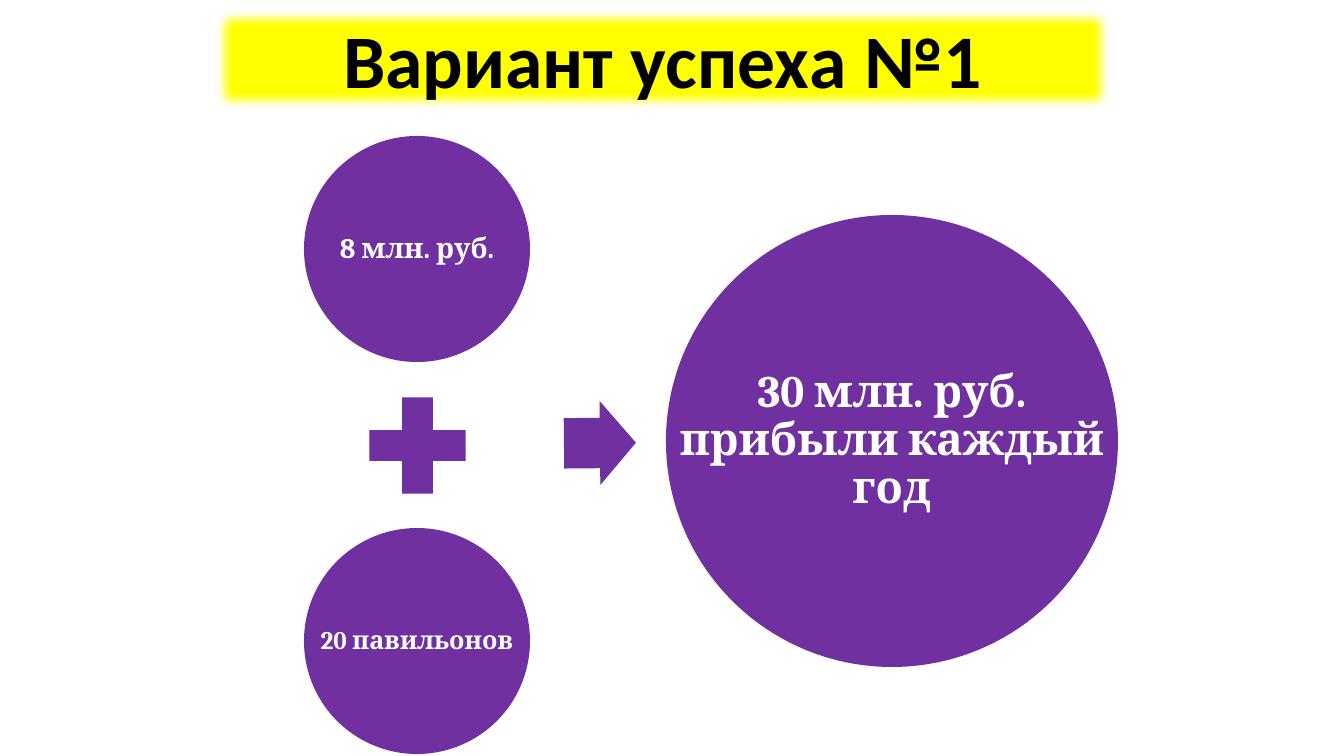
import lxml.etree
import pptx
import pptx.dml.color
import pptx.enum.shapes
import pptx.enum.text
import pptx.oxml.ns
import pptx.util

EMU_PER_PX = 914400 / 100.8
BLACK = pptx.dml.color.RGBColor(0x00, 0x00, 0x00)
WHITE = pptx.dml.color.RGBColor(0xFF, 0xFF, 0xFF)
YELLOW = pptx.dml.color.RGBColor(0xFF, 0xFF, 0x00)
GREEN = pptx.dml.color.RGBColor(0x92, 0xD0, 0x50)
PURPLE = pptx.dml.color.RGBColor(0x70, 0x30, 0xA0)
SHAPES = pptx.enum.shapes.MSO_SHAPE
ANCHOR = pptx.enum.text.MSO_ANCHOR


def px(length):
    """Turn a length in px into EMU."""
    return pptx.util.Emu(round(length * EMU_PER_PX))


def add_filled_shape(slide, kind, left, top, width, height, color=PURPLE):
    """Add a preset shape with a plain fill and no outline or shadow."""
    shape = slide.shapes.add_shape(kind, px(left), px(top), px(width), px(height))
    shape.shadow.inherit = False
    shape.fill.solid()
    shape.fill.fore_color.rgb = color
    shape.line.fill.background()
    return shape


def write_text(shape, text, *, size, font="Cambria", color=WHITE,
               anchor=ANCHOR.MIDDLE, line_spacing=0.9):
    """Write one bold, centred paragraph into a shape."""
    frame = shape.text_frame
    frame.word_wrap = True
    frame.vertical_anchor = anchor
    paragraph = frame.paragraphs[0]
    paragraph.alignment = pptx.enum.text.PP_ALIGN.CENTER
    paragraph.line_spacing = line_spacing
    run = paragraph.add_run()
    run.text = text
    run.font.name = font
    run.font.size = pptx.util.Pt(size)
    run.font.bold = True
    run.font.color.rgb = color


def add_title(slide, text):
    """Add the title on a yellow band with soft edges."""
    band = add_filled_shape(slide, SHAPES.RECTANGLE, 214, 8, 897, 102, YELLOW)
    band.line.color.rgb = GREEN
    band.line.width = pptx.util.Pt(4.5)
    effects = band._element.spPr.find(pptx.oxml.ns.qn("a:effectLst"))
    lxml.etree.SubElement(effects, pptx.oxml.ns.qn("a:softEdge"), rad="112500")
    write_text(band, text, size=54, font="Calibri", color=BLACK,
               anchor=ANCHOR.TOP, line_spacing=1.0)
    band.text_frame.auto_size = pptx.enum.text.MSO_AUTO_SIZE.SHAPE_TO_FIT_TEXT


def add_circle(slide, text, left, top, diameter, *, size, inset=3):
    """Add a circle with a label as wide as its diameter."""
    add_filled_shape(slide, SHAPES.OVAL, left, top, diameter, diameter)
    label = slide.shapes.add_textbox(px(left), px(top), px(diameter), px(diameter))
    frame = label.text_frame
    frame.margin_left = frame.margin_right = px(inset)
    frame.margin_top = frame.margin_bottom = px(inset)
    write_text(label, text, size=size)


def main():
    """Build the slide and save it."""
    presentation = pptx.Presentation()
    presentation.slide_width = px(1344)
    presentation.slide_height = px(756)
    slide = presentation.slides.add_slide(presentation.slide_layouts[6])
    add_title(slide, "Вариант успеха №1")
    add_circle(slide, "8 млн. руб.", 304, 136, 226, size=20)
    add_filled_shape(slide, SHAPES.MATH_PLUS, 352, 380, 131, 131)
    add_circle(slide, "20 павильонов", 304, 528, 226, size=18)
    arrow = add_filled_shape(slide, SHAPES.RIGHT_ARROW, 564, 401, 72, 84)
    arrow.adjustments[0] = 0.6
    arrow.adjustments[1] = 0.5
    arrow.rotation = 359.5
    add_circle(slide, "30 млн. руб. прибыли каждый год", 666, 215, 452, size=32, inset=4)
    presentation.save("out.pptx")


if __name__ == "__main__":
    main()
